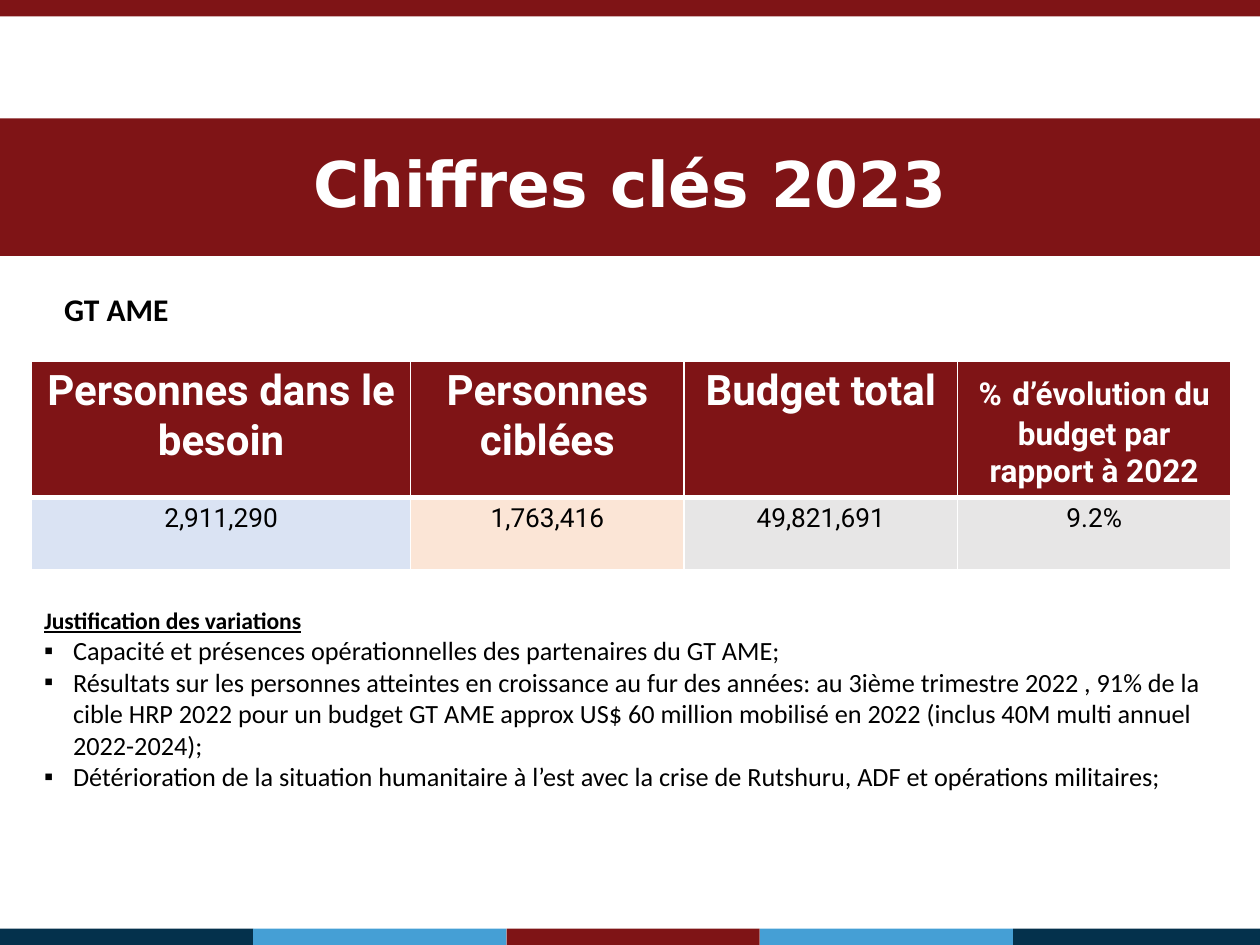
from dataclasses import dataclass

from lxml.etree import SubElement
from pptx import Presentation
from pptx.dml.color import RGBColor
from pptx.enum.shapes import MSO_SHAPE as Preset
from pptx.enum.text import MSO_ANCHOR as Anchor, MSO_AUTO_SIZE as AutoSize, PP_ALIGN as Align
from pptx.oxml.ns import qn
from pptx.util import Inches, Pt

COLORS = {
    "red": "7F1416",
    "navy": "04314C",
    "sky": "459FD5",
    "white": "FFFFFF",
    "black": "000000",
    "pale_blue": "DAE3F3",
    "pale_orange": "FBE5D6",
    "pale_grey": "E7E6E6",
}
SLIDE_WIDTH, SLIDE_HEIGHT = 10, 7.5
BAR_HEIGHT = 0.13
FOOTER_WIDTH = 2.01
FOOTER_COLORS = ["navy", "sky", "red", "sky", "navy"]


@dataclass
class KeyFigure:
    heading: list[tuple[str, float]]
    value: str
    value_fill: str
    width: float


KEY_FIGURES = [
    KeyFigure([("Personnes dans le besoin", 24)], "2,911,290", "pale_blue", 3.01),
    KeyFigure([("Personnes ciblées", 24)], "1,763,416", "pale_orange", 2.17),
    KeyFigure([("Budget total", 24)], "49,821,691", "pale_grey", 2.17),
    KeyFigure(
        [("%", 18), (" ", 24), ("d’évolution du budget par rapport à 2022", 18)],
        "9.2%", "pale_grey", 2.17,
    ),
]
REASONS = [
    "Capacité et présences opérationnelles des partenaires du GT AME;",
    "Résultats sur les personnes atteintes en croissance au fur des années: "
    "au 3ième trimestre 2022 , 91% de la cible HRP 2022 pour un budget GT AME "
    "approx US$ 60 million mobilisé en 2022 (inclus 40M multi annuel 2022-2024);",
    "Détérioration de la situation humanitaire à l’est avec la crise de Rutshuru, "
    "ADF et opérations militaires;",
]


def rgb(color: str) -> RGBColor:
    return RGBColor.from_string(COLORS[color])


def place(shape, left: float, top: float, width: float, height: float) -> None:
    shape.left, shape.top = Inches(left), Inches(top)
    shape.width, shape.height = Inches(width), Inches(height)


def format_runs(paragraph, font: str, size: float, color: str, bold: bool = False) -> None:
    for run in paragraph.runs:
        run.font.name = font
        run.font.size = Pt(size)
        run.font.bold = bold
        run.font.color.rgb = rgb(color)


def draw_bar(slide, left: float, top: float, width: float, color: str) -> None:
    bar = slide.shapes.add_shape(
        Preset.RECTANGLE, Inches(left), Inches(top), Inches(width), Inches(BAR_HEIGHT)
    )
    bar.shadow.inherit = False
    bar.fill.solid()
    bar.fill.fore_color.rgb = rgb(color)
    bar.line.fill.background()


def style_cell(cell, fill: str, top: float, bottom: float) -> None:
    cell.margin_left = cell.margin_right = Inches(0.07)
    cell.margin_top = cell.margin_bottom = Inches(0.04)
    cell.vertical_anchor = Anchor.TOP
    properties = cell._tc.get_or_add_tcPr()
    for side, width in (("L", 1), ("R", 1), ("T", top), ("B", bottom)):
        border = SubElement(properties, qn(f"a:ln{side}"), w=str(Pt(width)))
        SubElement(SubElement(border, qn("a:solidFill")), qn("a:srgbClr"), val=COLORS["white"])
    cell.fill.solid()
    cell.fill.fore_color.rgb = rgb(fill)


def draw_key_figures(slide, figures: list[KeyFigure]) -> None:
    row_heights = (1.07, 0.57)
    table = slide.shapes.add_table(
        2, len(figures), Inches(0.25), Inches(2.87),
        Inches(sum(figure.width for figure in figures)), Inches(sum(row_heights)),
    ).table
    table.horz_banding = False
    for row, height in zip(table.rows, row_heights):
        row.height = Inches(height)
    for column, figure in enumerate(figures):
        table.columns[column].width = Inches(figure.width)

        heading_cell = table.cell(0, column)
        style_cell(heading_cell, "red", 1, 3)
        heading = heading_cell.text_frame.paragraphs[0]
        heading.alignment = Align.CENTER
        for text, size in figure.heading:
            run = heading.add_run()
            run.text = text
        format_runs(heading, "Roboto", 24, "white", bold=True)
        for run, (text, size) in zip(heading.runs, figure.heading):
            run.font.size = Pt(size)

        value_cell = table.cell(1, column)
        style_cell(value_cell, figure.value_fill, 3, 1)
        value = value_cell.text_frame.paragraphs[0]
        value.text = figure.value
        value.alignment = Align.CENTER
        format_runs(value, "Roboto", 15, "black")


def set_bullet(paragraph, char: str = "") -> None:
    properties = paragraph._p.get_or_add_pPr()
    indent = Inches(0.23) if char else 0
    properties.set("marL", str(indent))
    properties.set("indent", str(-indent))
    if char:
        SubElement(properties, qn("a:buChar"), char=char)
    else:
        SubElement(properties, qn("a:buNone"))


def write_title(title) -> None:
    place(title, 0, 0.94, SLIDE_WIDTH, 1.09)
    title.fill.solid()
    title.fill.fore_color.rgb = rgb("red")
    title.text_frame.text = "Chiffres clés 2023"
    title.text_frame.vertical_anchor = Anchor.MIDDLE
    heading = title.text_frame.paragraphs[0]
    heading.alignment = Align.CENTER
    heading.line_spacing = 0.9
    format_runs(heading, "DejaVu Sans", 36, "white", bold=True)


def write_justification(body) -> None:
    place(body, 0.25, 4.76, 9.38, 1.59)
    frame = body.text_frame
    frame.text = "\n".join(["Justification des variations", *REASONS])
    frame.auto_size = AutoSize.SHAPE_TO_FIT_TEXT
    heading, *reasons = frame.paragraphs
    for paragraph in frame.paragraphs:
        paragraph.space_before = Pt(0)
    set_bullet(heading)
    format_runs(heading, "Calibri", 13.5, "black", bold=True)
    heading.runs[0].font.underline = True
    for reason in reasons:
        set_bullet(reason, "▪")
        format_runs(reason, "Calibri", 15, "black")


def write_group_name(slide) -> None:
    group = slide.shapes.add_textbox(Inches(0.41), Inches(2.25), Inches(2.49), Inches(0.4))
    group.text_frame.word_wrap = True
    group.text_frame.auto_size = AutoSize.SHAPE_TO_FIT_TEXT
    group.text_frame.text = "GT AME"
    format_runs(group.text_frame.paragraphs[0], "Calibri", 18, "black", bold=True)


def main() -> None:
    deck = Presentation()
    deck.slide_width, deck.slide_height = Inches(SLIDE_WIDTH), Inches(SLIDE_HEIGHT)
    slide = deck.slides.add_slide(deck.slide_layouts[1])

    draw_bar(slide, 0, 0, SLIDE_WIDTH, "red")
    for index, color in enumerate(FOOTER_COLORS):
        left = index * FOOTER_WIDTH
        width = min(FOOTER_WIDTH, SLIDE_WIDTH - left)
        draw_bar(slide, left, SLIDE_HEIGHT - BAR_HEIGHT, width, color)

    write_title(slide.shapes.title)
    draw_key_figures(slide, KEY_FIGURES)
    write_justification(slide.placeholders[1])
    write_group_name(slide)
    deck.save("out.pptx")


if __name__ == "__main__":
    main()
